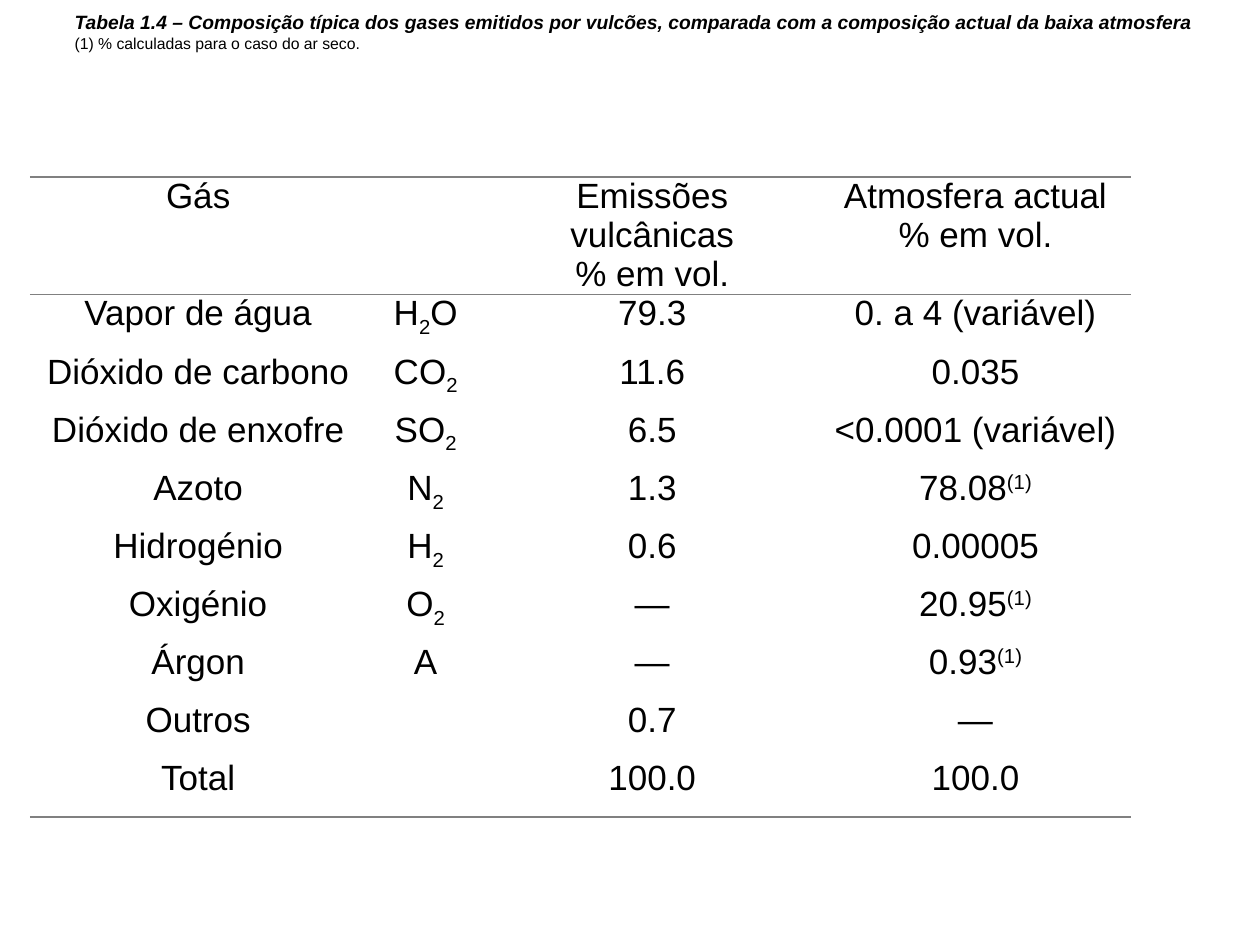
import itertools
from dataclasses import dataclass

import lxml.etree
import pptx
import pptx.dml.color
import pptx.enum.text
import pptx.oxml.ns
import pptx.util

Pt = pptx.util.Pt
Align = pptx.enum.text.PP_ALIGN
Anchor = pptx.enum.text.MSO_ANCHOR
qn = pptx.oxml.ns.qn


@dataclass(frozen=True)
class Theme:
    font: str = "Arial"
    ink: str = "000000"
    rule: str = "808080"
    caption_size: float = 11
    note_size: float = 9
    table_size: float = 20
    thick_rule: float = 1.5
    thin_rule: float = 1
    subscript: int = -25000
    superscript: int = 30000


@dataclass(frozen=True)
class Gas:
    name: str
    formula: str
    volcanic: str
    atmosphere: str
    dry_air: bool = False


THEME = Theme()
CAPTION = ("Tabela 1.4 – Composição típica dos gases emitidos por vulcões, "
           "comparada com a composição actual da baixa atmosfera")
NOTE_MARK = "(1)"
NOTE = f"{NOTE_MARK} % calculadas para o caso do ar seco."
HEADINGS = ("Gás", "", "Emissões vulcânicas\n% em vol.", "Atmosfera actual\n% em vol.")
GASES = (
    Gas("Vapor de água", "H2O", "79.3", "0. a 4 (variável)"),
    Gas("Dióxido de carbono", "CO2", "11.6", "0.035"),
    Gas("Dióxido de enxofre", "SO2", "6.5", "<0.0001 (variável)"),
    Gas("Azoto", "N2", "1.3", "78.08", dry_air=True),
    Gas("Hidrogénio", "H2", "0.6", "0.00005"),
    Gas("Oxigénio", "O2", "—", "20.95", dry_air=True),
    Gas("Árgon", "A", "—", "0.93", dry_air=True),
    Gas("Outros", "", "0.7", "—"),
    Gas("Total", "", "100.0", "100.0"),
)
COLUMN_WIDTHS = (192.5, 67.5, 191.5, 178)
HEADER_HEIGHT, GAS_HEIGHT = 66.6, 33.2


def style_run(run, size: float, bold: bool = False, italic: bool = False) -> None:
    run.font.name = THEME.font
    run.font.size = Pt(size)
    run.font.bold, run.font.italic = bold, italic
    run.font.color.rgb = pptx.dml.color.RGBColor.from_string(THEME.ink)


def add_shifted(paragraph, text: str, baseline: int) -> None:
    """Append a run, raised or lowered when baseline is not zero."""
    run = paragraph.add_run()
    run.text = text
    if baseline:
        run.font._element.set("baseline", str(baseline))


def set_border(cell, side: str, width: float) -> None:
    """Rule one side of a cell; a width of zero leaves it open."""
    properties = cell._tc.get_or_add_tcPr()
    line = lxml.etree.SubElement(properties, qn(f"a:ln{side}"), w=str(Pt(width)))
    if width:
        fill = lxml.etree.SubElement(line, qn("a:solidFill"))
        lxml.etree.SubElement(fill, qn("a:srgbClr"), val=THEME.rule)
    else:
        lxml.etree.SubElement(line, qn("a:noFill"))


def style_cell(cell, top: float, bottom: float) -> None:
    cell.margin_left = cell.margin_right = Pt(5)
    cell.margin_top = cell.margin_bottom = 0
    for side, width in zip("LRTB", (0, 0, top, bottom)):
        set_border(cell, side, width)
    cell.fill.background()
    for paragraph in cell.text_frame.paragraphs:
        paragraph.alignment = Align.CENTER
        for run in paragraph.runs:
            style_run(run, THEME.table_size)


def fill_gas(cells, gas: Gas) -> None:
    name, formula, volcanic, atmosphere = cells
    name.text_frame.text = gas.name
    volcanic.text_frame.text = gas.volcanic
    atmosphere.text_frame.text = gas.atmosphere
    for is_digit, symbols in itertools.groupby(gas.formula, str.isdigit):
        add_shifted(formula.text_frame.paragraphs[0], "".join(symbols),
                    THEME.subscript if is_digit else 0)
    if gas.dry_air:
        add_shifted(atmosphere.text_frame.paragraphs[0], NOTE_MARK, THEME.superscript)


def add_caption(slide) -> None:
    caption = slide.shapes.title
    caption.left, caption.top, caption.width, caption.height = 0, 0, Pt(720), Pt(36)
    frame = caption.text_frame
    frame.text = f"{CAPTION}\n{NOTE}"
    frame.word_wrap = True
    frame.auto_size = pptx.enum.text.MSO_AUTO_SIZE.NONE
    frame.vertical_anchor = Anchor.MIDDLE
    for paragraph in frame.paragraphs:
        paragraph.alignment = Align.LEFT
        paragraph._p.get_or_add_pPr().set("indent", str(Pt(35.4)))
    heading, note = frame.paragraphs
    style_run(heading.runs[0], THEME.caption_size, bold=True, italic=True)
    style_run(note.runs[0], THEME.note_size)


def add_gas_table(slide) -> None:
    height = HEADER_HEIGHT + GAS_HEIGHT * len(GASES)
    table = slide.shapes.add_table(
        len(GASES) + 1, len(COLUMN_WIDTHS),
        Pt(17), Pt(101.2), Pt(sum(COLUMN_WIDTHS)), Pt(height)).table
    table.first_row = table.horz_banding = False
    for column, width in zip(table.columns, COLUMN_WIDTHS):
        column.width = Pt(width)

    # Contents
    header, *gas_rows = table.rows
    header.height = Pt(HEADER_HEIGHT)
    for cell, heading in zip(header.cells, HEADINGS):
        cell.text_frame.text = heading
    for row, gas in zip(gas_rows, GASES):
        row.height = Pt(GAS_HEIGHT)
        fill_gas(row.cells, gas)

    # Rules above the header, below it and below the total
    rules = [THEME.thick_rule, THEME.thin_rule, *[0] * (len(GASES) - 1), THEME.thick_rule]
    for row, top, bottom in zip(table.rows, rules, rules[1:]):
        for cell in row.cells:
            style_cell(cell, top, bottom)


def main() -> None:
    presentation = pptx.Presentation()
    presentation.slide_width, presentation.slide_height = Pt(720), Pt(540)
    slide = presentation.slides.add_slide(
        presentation.slide_layouts.get_by_name("Title Only"))
    add_gas_table(slide)
    add_caption(slide)
    presentation.save("out.pptx")


if __name__ == "__main__":
    main()
